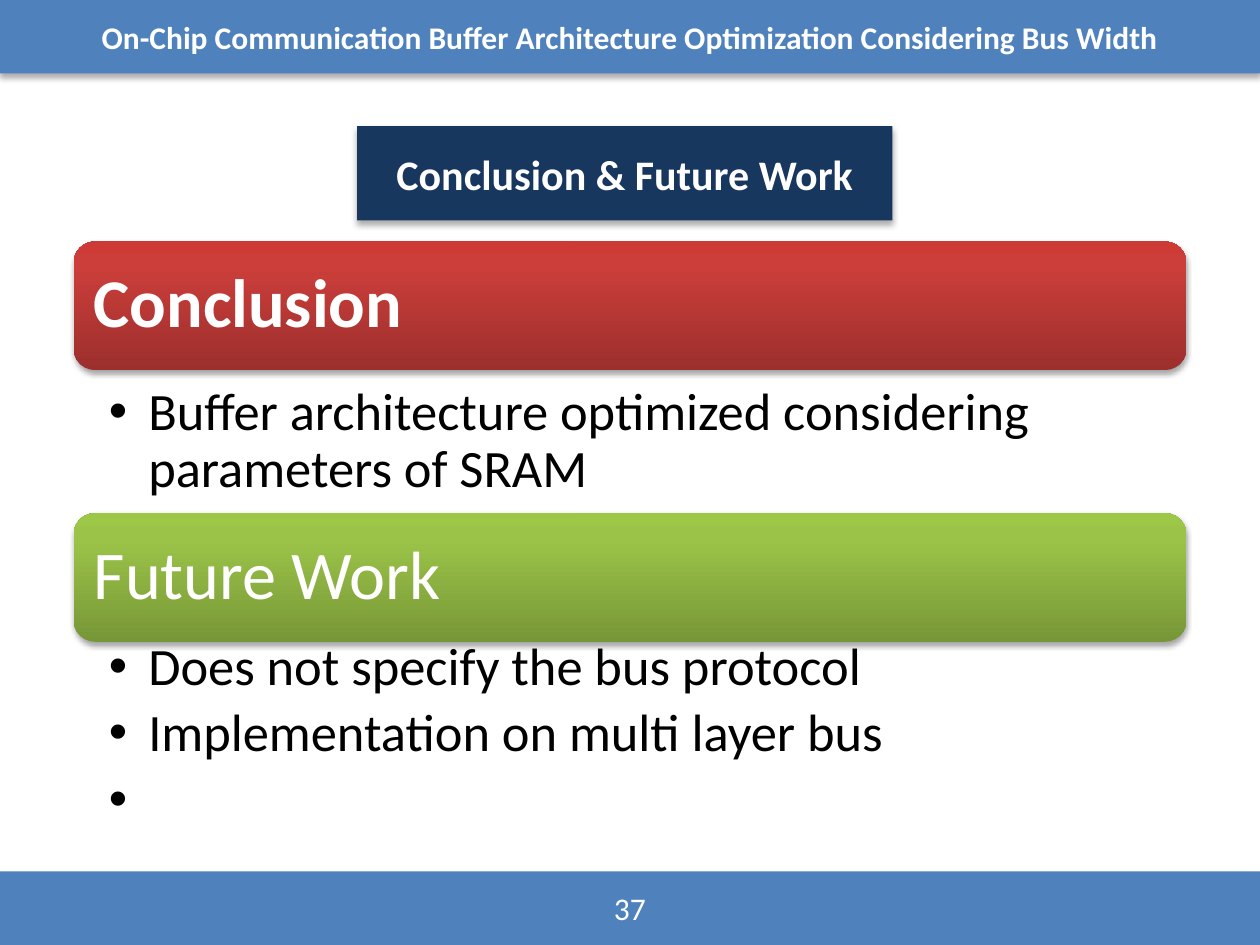
from copy import deepcopy

from lxml import etree
from pptx import Presentation
from pptx.dml.color import RGBColor
from pptx.enum.shapes import MSO_SHAPE
from pptx.enum.text import MSO_ANCHOR, MSO_AUTO_SIZE, PP_ALIGN
from pptx.oxml.ns import qn
from pptx.util import Pt

RECT, ROUND = MSO_SHAPE.RECTANGLE, MSO_SHAPE.ROUNDED_RECTANGLE
MIDDLE, TOP = MSO_ANCHOR.MIDDLE, MSO_ANCHOR.TOP
LEFT, CENTER = PP_ALIGN.LEFT, PP_ALIGN.CENTER
WIDTH, HEIGHT, BAR = 720, 540, 42
TWO_LISTS = 3

COLORS = {"bar": "4F81BD", "title": "17375E", "white": "FFFFFF", "black": "000000"}
REDS = ((0, "9C2F2D"), (0.8, "CB3E3A"), (1, "CE3B37"))
GREENS = ((0, "779737"), (0.8, "9BC348"), (1, "9DC746"))

BAR_TEXT = {"size": Pt(18), "bold": False}
HEAD_TEXT = {"size": Pt(18), "bold": True}
TITLE_TEXT = {"size": Pt(24), "bold": True}
LIST_TEXT = {"size": Pt(30), "bold": False}


def rgb(name):
    return RGBColor.from_string(COLORS.get(name, name))


def place(shape, box):
    for name, value in zip(("left", "top", "width", "height"), box):
        setattr(shape, name, Pt(value))


def shade(shape, alpha=32, blur=3.5, dist=2.2):
    """Cast a soft shadow straight down."""
    shape.shadow.inherit = False
    effects = shape._element.spPr.find(qn("a:effectLst"))
    outer = etree.SubElement(effects, qn("a:outerShdw"), blurRad=str(Pt(blur)),
                             dist=str(Pt(dist)), dir="5400000", rotWithShape="0")
    color = etree.SubElement(outer, qn("a:srgbClr"), val=COLORS["black"])
    etree.SubElement(color, qn("a:alpha"), val=str(alpha * 1000))


def blend(shape, stops):
    """Fill with a gradient that runs from the bottom up."""
    shape.fill.gradient()
    shape.fill.gradient_angle = 90
    items = shape.fill._fill._gradFill.find(qn("a:gsLst"))
    items.append(deepcopy(items[-1]))
    for stop, (spot, color) in zip(shape.fill.gradient_stops, stops):
        stop.position = spot
        stop.color.rgb = rgb(color)


def write(shape, lines, style, color="white", align=CENTER, anchor=MIDDLE,
          insets=(7.2, 3.6, 7.2, 3.6), para=None):
    frame = shape.text_frame
    frame.word_wrap = True
    frame.auto_size = MSO_AUTO_SIZE.NONE
    frame.vertical_anchor = anchor
    for side, value in zip(("left", "top", "right", "bottom"), insets):
        setattr(frame, f"margin_{side}", Pt(value))
    for i, line in enumerate(lines):
        p = frame.add_paragraph() if i else frame.paragraphs[0]
        p.alignment = align
        for name, value in (para or {}).items():
            setattr(p, name, value)
        run = p.add_run()
        run.text = line
        run.font.name = "Calibri"
        run.font.color.rgb = rgb(color)
        for name, value in style.items():
            setattr(run.font, name, value)


def panel(shape, color, text, style):
    shape.fill.solid()
    shape.fill.fore_color.rgb = rgb(color)
    shape.line.fill.background()
    shade(shape)
    write(shape, [text], style)


def bar(slide, top, text, style):
    shape = slide.shapes.add_shape(RECT, 0, Pt(top), Pt(WIDTH), Pt(BAR))
    panel(shape, "bar", text, style)


def title(slide, box, text):
    shape = slide.shapes.title
    place(shape, box)
    panel(shape, "title", text, TITLE_TEXT)


def topic(slide, body, box, gap, head, bold, stops, lines):
    """Set a rounded heading at the top of the box and its list below."""
    left, top, width, height = box
    deep = 73.5
    shape = slide.shapes.add_shape(ROUND, *map(Pt, (left, top, width, deep)))
    blend(shape, stops)
    shape.line.fill.background()
    shade(shape, 35, 3.1, 1.8)
    write(shape, [head], {"size": Pt(39), "bold": bold}, align=LEFT,
          insets=(8, 8, 8, 8), para={"line_spacing": 0.9})

    place(body, (left, top + deep + gap, width, height - deep - gap))
    write(body, lines, LIST_TEXT, "black", LEFT, TOP, (20.2, 3.6, 21.6, 3.6),
          {"line_spacing": 0.9, "space_before": Pt(0), "space_after": Pt(5.5)})
    for p in body.text_frame.paragraphs:
        props = p._p.get_or_add_pPr()
        props.set("marL", str(Pt(22.5)))
        props.set("indent", str(Pt(-22.5)))


def main():
    deck = Presentation()
    deck.slide_width, deck.slide_height = Pt(WIDTH), Pt(HEIGHT)
    slide = deck.slides.add_slide(deck.slide_layouts[TWO_LISTS])
    bodies = slide.placeholders
    bar(slide, HEIGHT - BAR, "37", BAR_TEXT)
    bar(slide, 0, "On-Chip Communication Buffer Architecture Optimization "
        "Considering Bus Width", HEAD_TEXT)
    title(slide, (204, 72, 306, 54), "Conclusion & Future Work")
    topic(slide, bodies[1], (42, 138, 636, 153.5), 5, "Conclusion", True, REDS,
          ["Buffer architecture optimized considering parameters of SRAM"])
    topic(slide, bodies[2], (42, 293.25, 636, 192.75), -4.5, "Future Work", False,
          GREENS, ["Does not specify the bus protocol",
                   "Implementation on multi layer bus", "\t\t"])
    deck.save("out.pptx")


if __name__ == "__main__":
    main()
